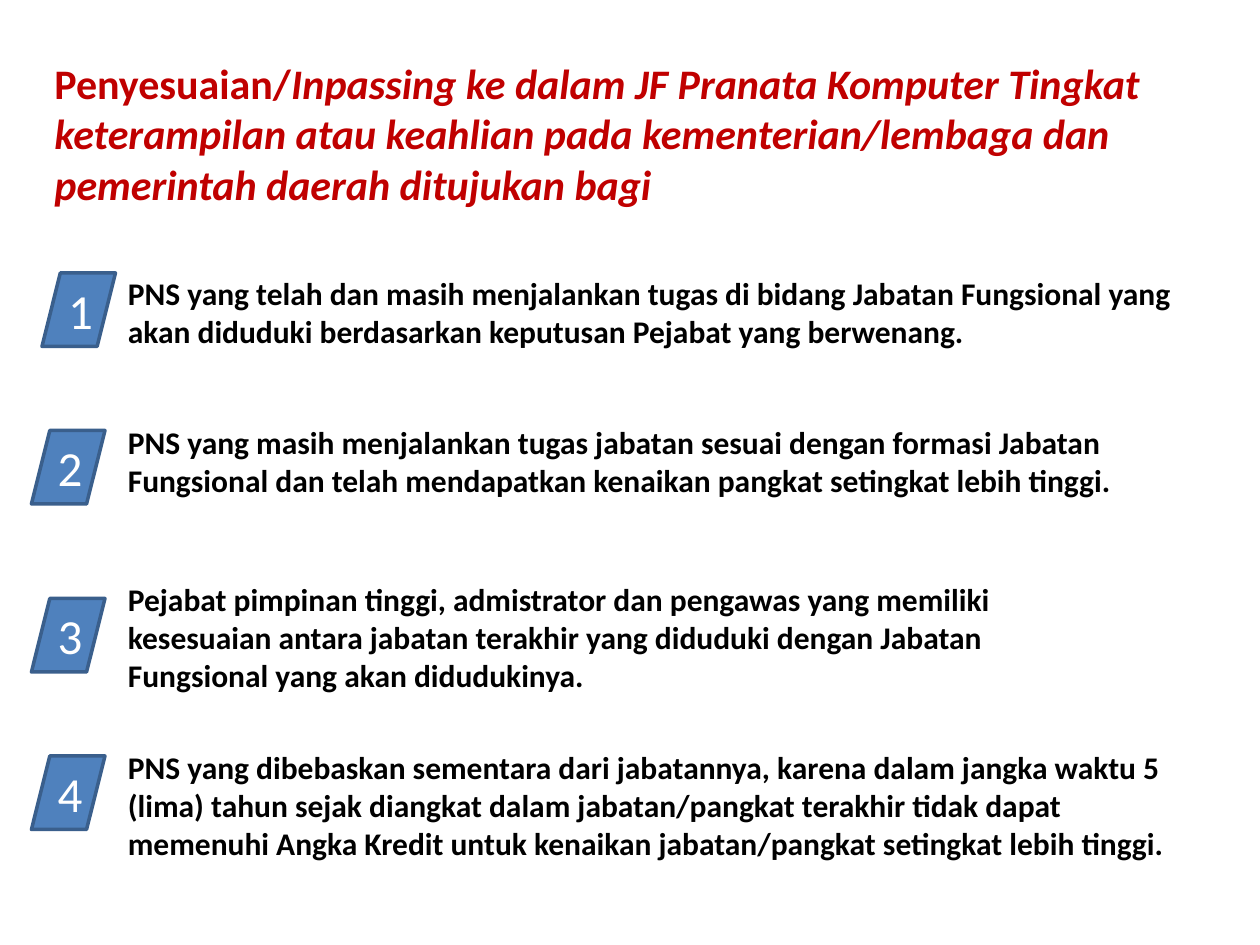
from pptx import Presentation
from pptx import util as u
from pptx.dml.color import RGBColor
from pptx.enum import shapes, text

COLORS = {
    "title": "C00000",
    "body": "000000",
    "badge": "4F81BD",
    "outline": "3A5F8C",
    "number": "FFFFFF",
}

TITLE = [
    ("Penyesuaian/", False),
    ("Inpassing ke dalam JF Pranata Komputer Tingkat keterampilan atau keahlian "
     "pada kementerian/lembaga dan pemerintah daerah ditujukan bagi", True),
]

ITEMS = [
    (131, 612, 73, 24, 156,
     "PNS yang telah dan masih menjalankan tugas di bidang Jabatan Fungsional yang "
     "akan diduduki berdasarkan keputusan Pejabat yang berwenang."),
    (216, 618, 73, 18, 246,
     "PNS yang masih menjalankan tugas jabatan sesuai dengan formasi Jabatan "
     "Fungsional dan telah mendapatkan kenaikan pangkat setingkat lebih tinggi."),
    (306, 552, 94, 18, 342,
     "Pejabat pimpinan tinggi, admistrator dan pengawas yang memiliki kesesuaian "
     "antara jabatan terakhir yang diduduki dengan Jabatan Fungsional yang akan "
     "didudukinya."),
    (402, 624, 94, 18, 432,
     "PNS yang dibebaskan sementara dari jabatannya, karena dalam jangka waktu 5 "
     "(lima) tahun sejak diangkat dalam jabatan/pangkat terakhir tidak dapat "
     "memenuhi Angka Kredit untuk kenaikan jabatan/pangkat setingkat lebih tinggi."),
]


class SlideBuilder:
    font_name = "Calibri"
    line_height = 1.22
    inset = 3.6
    badge_size = 42

    def __init__(self, page):
        self.page = page

    def color(self, name):
        return RGBColor.from_string(COLORS[name])

    def style(self, para, size, color, bold=False):
        para.font.name = self.font_name
        para.font.size = u.Pt(size)
        para.font.bold = bold
        para.font.color.rgb = self.color(color)

    def text_box(self, left, top, width, height, spans, size, color):
        box = self.page.shapes.add_textbox(
            u.Pt(left), u.Pt(top), u.Pt(width), u.Pt(height))
        frame = box.text_frame
        frame.word_wrap = True
        frame.auto_size = text.MSO_AUTO_SIZE.SHAPE_TO_FIT_TEXT
        frame.margin_top = u.Pt(self.inset + self.line_height * size)
        para = frame.paragraphs[0]
        self.style(para, size, color, bold=True)
        for words, italic in spans:
            span = para.add_run()
            span.text = words
            if italic:
                span.font.italic = True

    def badge(self, left, top, number):
        badge = self.page.shapes.add_shape(
            shapes.MSO_SHAPE.PARALLELOGRAM, u.Pt(left), u.Pt(top),
            u.Pt(self.badge_size), u.Pt(self.badge_size))
        badge.shadow.inherit = False
        badge.fill.solid()
        badge.fill.fore_color.rgb = self.color("badge")
        badge.line.color.rgb = self.color("outline")
        badge.line.width = u.Pt(2)
        frame = badge.text_frame
        frame.vertical_anchor = text.MSO_ANCHOR.MIDDLE
        para = frame.paragraphs[0]
        para.text = str(number)
        para.alignment = text.PP_ALIGN.CENTER
        self.style(para, 28, "number")


def main():
    deck = Presentation()
    deck.slide_width, deck.slide_height = u.Pt(720), u.Pt(540)
    builder = SlideBuilder(deck.slides.add_slide(deck.slide_layouts[6]))
    builder.text_box(24, 0, 642, 124, TITLE, 24, "title")
    for number, item in enumerate(ITEMS, 1):
        top, width, height, badge_left, badge_top, words = item
        builder.text_box(66, top, width, height, [(words, False)], 18, "body")
        builder.badge(badge_left, badge_top, number)
    deck.save("out.pptx")


if __name__ == "__main__":
    main()
